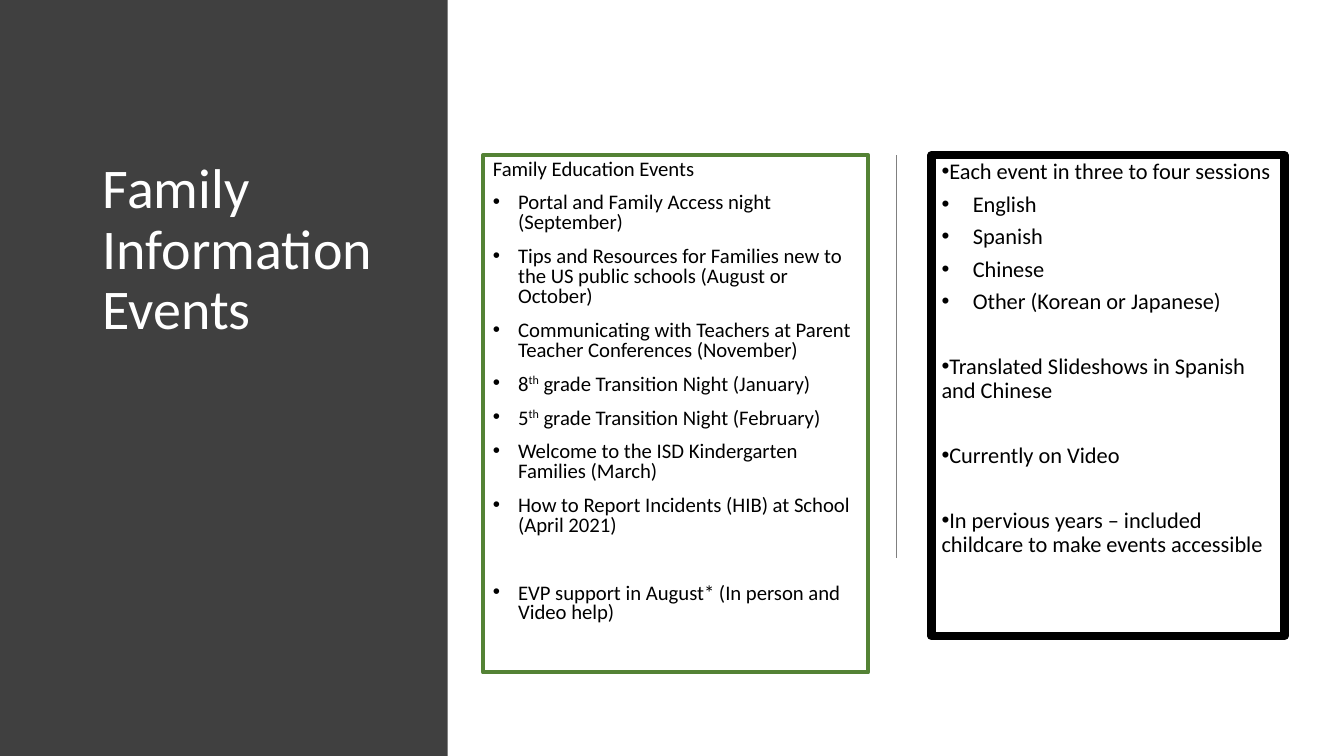
from dataclasses import dataclass

from lxml.etree import SubElement
from pptx import Presentation
from pptx.dml.color import RGBColor
from pptx.enum.shapes import MSO_CONNECTOR, MSO_SHAPE
from pptx.enum.text import MSO_ANCHOR, MSO_AUTO_SIZE, PP_ALIGN
from pptx.oxml.ns import qn
from pptx.slide import Slide
from pptx.text.text import TextFrame, _Paragraph as Paragraph
from pptx.util import Emu, Pt

EMU_PER_PX = 9144  # 100 px to the inch


def px(length: int) -> Emu:
    return Emu(length * EMU_PER_PX)


@dataclass(frozen=True)
class Theme:
    font: str = "Calibri"
    sidebar: RGBColor = RGBColor(0x40, 0x40, 0x40)
    title: RGBColor = RGBColor(0xFF, 0xFF, 0xFF)
    text: RGBColor = RGBColor(0x00, 0x00, 0x00)
    events_border: RGBColor = RGBColor(0x54, 0x82, 0x35)
    sessions_border: RGBColor = RGBColor(0x00, 0x00, 0x00)
    divider: RGBColor = RGBColor(0x80, 0x80, 0x80)
    title_size: float = 40
    events_size: float = 14.8
    sessions_size: float = 16


THEME = Theme()


@dataclass(frozen=True)
class Box:
    left: int
    top: int
    width: int
    height: int


@dataclass(frozen=True)
class Item:
    text: str  # "^" surrounds a superscript
    margin: int = 0
    indent: int = 0
    bullet: bool = True
    gap_before: float = 0
    gap_after: float = 0


@dataclass(frozen=True)
class Panel:
    box: Box
    border: RGBColor
    border_width: float
    size: float
    line_spacing: float
    items: list[Item]


def event(text: str, gap: float = 10) -> Item:
    return Item(text, margin=25, indent=-25, gap_before=gap)


def note(text: str, gap: float = 29) -> Item:
    return Item(text, indent=-25, gap_after=gap)


def language(text: str, gap: float = 6) -> Item:
    return Item(text, margin=31, indent=-31, gap_after=gap)


SIDEBAR = Box(0, 0, 444, 750)
TITLE = Box(92, 154, 317, 477)
DIVIDER = Box(889, 154, 0, 400)

EVENTS = Panel(
    Box(479, 154, 382, 513), THEME.events_border, 3, THEME.events_size, 0.8,
    [
        Item("Family Education Events", bullet=False, gap_before=10),
        event("Portal and Family Access night (September)"),
        event("Tips and Resources for Families new to the US public schools (August or October)"),
        event("Communicating with Teachers at Parent Teacher Conferences (November)"),
        event("8^th^ grade Transition Night (January)"),
        event("5^th^ grade Transition Night (February)"),
        event("Welcome to the ISD Kindergarten Families (March)"),
        event("How to Report Incidents (HIB) at School (April 2021)"),
        event("EVP support in August* (In person and Video help)", gap=34),
    ],
)
SESSIONS = Panel(
    Box(924, 154, 350, 477), THEME.sessions_border, 6, THEME.sessions_size, 0.9,
    [
        note("Each event in three to four sessions", gap=6),
        language("English"),
        language("Spanish"),
        language("Chinese"),
        language("Other (Korean or Japanese)", gap=29),
        note("Translated Slideshows in Spanish and Chinese"),
        note("Currently on Video"),
        note("In pervious years – included childcare to make events accessible", gap=6),
    ],
)


def style(paragraph: Paragraph, size: float, color: RGBColor, spacing: float) -> None:
    paragraph.alignment = PP_ALIGN.LEFT
    paragraph.line_spacing = spacing
    paragraph.font.name = THEME.font
    paragraph.font.size = Pt(size)
    paragraph.font.color.rgb = color


def set_frame(frame: TextFrame) -> None:
    frame.word_wrap = True
    frame.auto_size = MSO_AUTO_SIZE.NONE
    frame.vertical_anchor = MSO_ANCHOR.TOP


def write_item(paragraph: Paragraph, item: Item, panel: Panel) -> None:
    properties = paragraph._p.get_or_add_pPr()
    properties.set("marL", str(px(item.margin)))
    properties.set("indent", str(px(item.indent)))
    if item.bullet:
        SubElement(properties, qn("a:buFont")).set("typeface", "Arial")
        SubElement(properties, qn("a:buChar")).set("char", "•")
    paragraph.space_before = Pt(item.gap_before)
    paragraph.space_after = Pt(item.gap_after)
    style(paragraph, panel.size, THEME.text, panel.line_spacing)
    for index, part in enumerate(item.text.split("^")):
        run = paragraph.add_run()
        run.text = part
        if index % 2:
            run._r.get_or_add_rPr().set("baseline", "30000")


def draw_panel(slide: Slide, panel: Panel) -> None:
    box = panel.box
    frame_shape = slide.shapes.add_shape(
        MSO_SHAPE.RECTANGLE, px(box.left), px(box.top), px(box.width), px(box.height))
    frame_shape.shadow.inherit = False
    frame_shape.fill.background()
    frame_shape.line.color.rgb = panel.border
    frame_shape.line.width = Pt(panel.border_width)
    frame = frame_shape.text_frame
    set_frame(frame)
    for index, item in enumerate(panel.items):
        paragraph = frame.add_paragraph() if index else frame.paragraphs[0]
        write_item(paragraph, item, panel)


def draw_sidebar(slide: Slide) -> None:
    sidebar = slide.shapes.add_shape(
        MSO_SHAPE.RECTANGLE, px(SIDEBAR.left), px(SIDEBAR.top),
        px(SIDEBAR.width), px(SIDEBAR.height))
    sidebar.shadow.inherit = False
    sidebar.fill.solid()
    sidebar.fill.fore_color.rgb = THEME.sidebar
    sidebar.line.fill.background()
    # Send the sidebar behind the title
    slide.shapes.title._element.addprevious(sidebar._element)


def draw_title(slide: Slide) -> None:
    title = slide.shapes.title
    title.left, title.top = px(TITLE.left), px(TITLE.top)
    title.width, title.height = px(TITLE.width), px(TITLE.height)
    title.text_frame.text = "Family Information Events"
    set_frame(title.text_frame)
    style(title.text_frame.paragraphs[0], THEME.title_size, THEME.title, 0.9)


def draw_divider(slide: Slide) -> None:
    divider = slide.shapes.add_connector(
        MSO_CONNECTOR.STRAIGHT, px(DIVIDER.left), px(DIVIDER.top),
        px(DIVIDER.left + DIVIDER.width), px(DIVIDER.top + DIVIDER.height))
    divider.line.color.rgb = THEME.divider
    divider.line.width = Pt(1)
    SubElement(divider._element.spPr, qn("a:effectLst"))


def main() -> None:
    deck = Presentation()
    deck.slide_width, deck.slide_height = px(1333), px(750)
    slide = deck.slides.add_slide(deck.slide_layouts[5])
    draw_sidebar(slide)
    draw_title(slide)
    draw_panel(slide, EVENTS)
    draw_divider(slide)
    draw_panel(slide, SESSIONS)
    deck.save("out.pptx")


if __name__ == "__main__":
    main()
